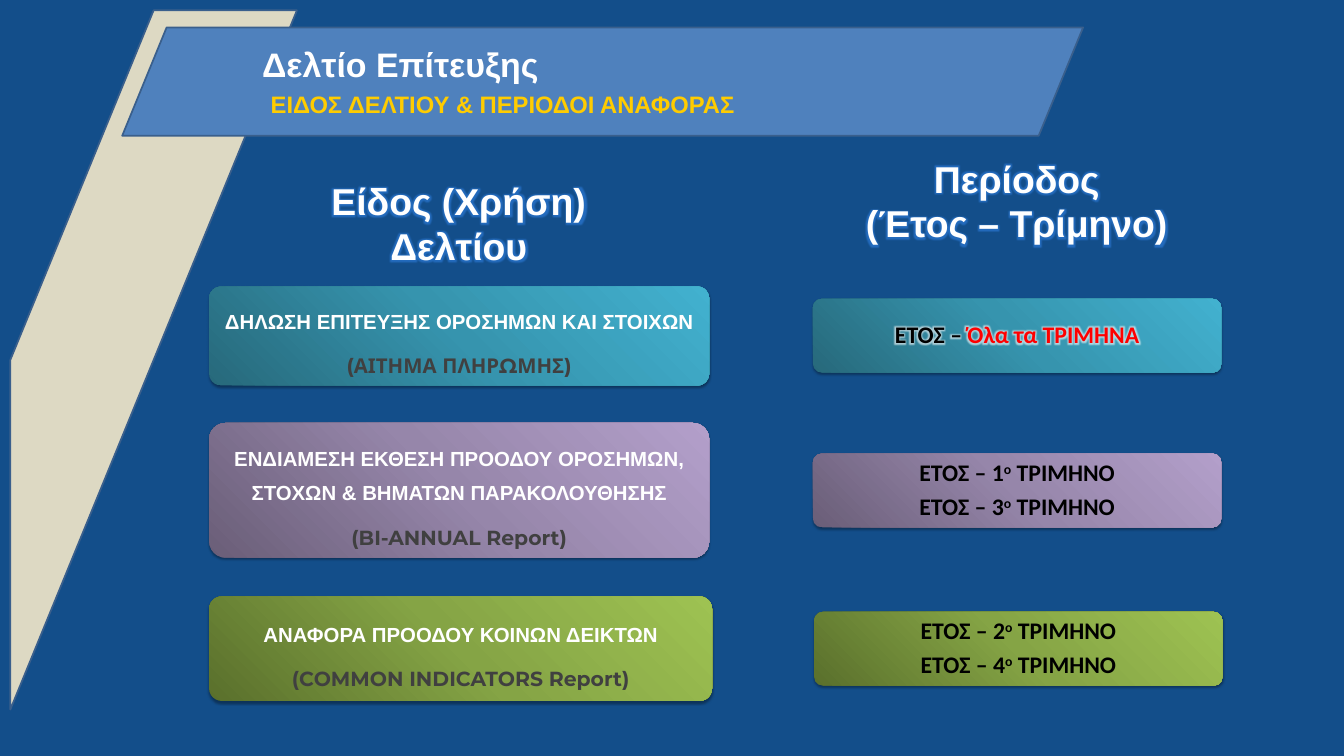
from copy import deepcopy

from lxml import etree
from pptx import Presentation
from pptx.dml.color import RGBColor
from pptx.enum.shapes import MSO_SHAPE
from pptx.enum.text import MSO_ANCHOR, PP_ALIGN
from pptx.oxml.ns import qn
from pptx.util import Cm, Pt

CENTER, LEFT = PP_ALIGN.CENTER, PP_ALIGN.LEFT
MIDDLE = MSO_ANCHOR.MIDDLE
ROUNDED = MSO_SHAPE.ROUNDED_RECTANGLE

COLORS = {
    "background": "134E8A", "stripe": "DDD9C3", "banner": "4F81BD", "outline": "3A5F8C",
    "white": "FFFFFF", "gold": "FFCC00", "grey": "404040", "black": "000000", "red": "FF0000",
    "glow": "2F7FE0",
}
GRADIENTS = {
    "teal": ("27697B", "3694AE", "42B1CF"),
    "purple": ("6A5E78", "9686AA", "B39FCA"),
    "green": ("5A702C", "85A445", "9EC252"),
}


def write(frame, paragraphs, size=24, font="Arial", color="white", align=CENTER, line=None,
          before=0, after=0, glow=None):
    """Fill a frame; each paragraph is a list of (text, format overrides) runs."""
    frame.word_wrap = True
    for i, runs in enumerate(paragraphs):
        paragraph = frame.paragraphs[0] if i == 0 else frame.add_paragraph()
        paragraph.alignment = align
        paragraph.line_spacing = line
        paragraph.space_before = Pt(before if i else 0)
        paragraph.space_after = Pt(after)
        for text, own in runs:
            run = paragraph.add_run()
            run.text = text
            run.font.size = Pt(size)
            run.font.bold = True
            run.font.color.rgb = RGBColor.from_string(COLORS[own.get("color", color)])
            properties = run.font._element
            if glow:
                effects = etree.Element(qn("a:effectLst"))
                halo = etree.SubElement(effects, qn("a:glow"), rad=str(Pt(8)))
                tint = etree.SubElement(halo, qn("a:srgbClr"), val=COLORS[glow])
                etree.SubElement(tint, qn("a:alpha"), val="60000")
                properties.find(qn("a:solidFill")).addnext(effects)
            run.font.name = own.get("font", font)
            if own.get("superscript"):
                properties.set("baseline", "30000")


def add_card(left, top, width, height, gradient, inset):
    """Add a rounded card with a diagonal gradient and soft shadow; return its text frame."""
    card = slide.shapes.add_shape(ROUNDED, Cm(left), Cm(top), Cm(width), Cm(height))
    card.adjustments[0] = 0.12
    card.line.fill.background()
    card.fill.gradient()
    card.fill.gradient_angle = 45
    properties = card._element.spPr
    stops = properties.find(qn("a:gradFill")).find(qn("a:gsLst"))
    stops.insert(1, deepcopy(stops[0]))
    for stop, position, color in zip(card.fill.gradient_stops, (0, 0.5, 1), GRADIENTS[gradient]):
        stop.position = position
        stop.color.rgb = RGBColor.from_string(color)
    card.shadow.inherit = False
    shadow = etree.SubElement(properties.find(qn("a:effectLst")), qn("a:outerShdw"),
                              blurRad=str(Pt(3.1)), dist=str(Pt(1.8)), dir="5400000",
                              rotWithShape="0")
    shade = etree.SubElement(shadow, qn("a:srgbClr"), val=COLORS["black"])
    etree.SubElement(shade, qn("a:alpha"), val="35000")
    frame = card.text_frame
    frame.vertical_anchor = MIDDLE
    frame.margin_left = frame.margin_right = frame.margin_top = frame.margin_bottom = Cm(inset)
    return frame


prs = Presentation()
prs.slide_width, prs.slide_height = Cm(55.85), Cm(31.42)
slide = prs.slides.add_slide(prs.slide_layouts[6])
slide.background.fill.solid()
slide.background.fill.fore_color.rgb = RGBColor.from_string(COLORS["background"])

# Diagonal stripe and title banner
for preset, box, color, slant in (
    (MSO_SHAPE.DIAGONAL_STRIPE, (0.43, 0.43, 11.91, 29.06), "stripe", 0.5),
    (MSO_SHAPE.PARALLELOGRAM, (5.08, 1.14, 39.93, 4.5), "banner", 0.41),
):
    decoration = slide.shapes.add_shape(preset, *map(Cm, box))
    decoration.adjustments[0] = slant
    decoration.fill.solid()
    decoration.fill.fore_color.rgb = RGBColor.from_string(COLORS[color])
    decoration.line.color.rgb = RGBColor.from_string(COLORS["outline"])
    decoration.line.width = Pt(2)
    decoration.shadow.inherit = False

# Title, subtitle and column headings
for box, lines, style in (
    ((10.64, 1.7, 29.62, 1.96), ["Δελτίο Επίτευξης"], {"size": 40, "align": LEFT}),
    ((11, 3.61, 32.33, 1.45), ["ΕΙΔΟΣ ΔΕΛΤΙΟΥ & ΠΕΡΙΟΔΟΙ ΑΝΑΦΟΡΑΣ"],
     {"size": 28, "color": "gold", "align": LEFT}),
    ((11.07, 7.29, 16, 4.01), ["Είδος (Χρήση) Δελτίου"], {"size": 44, "glow": "glow"}),
    ((34.26, 6.35, 16, 4.01), ["Περίοδος", "(Έτος – Τρίμηνο)"], {"size": 44, "glow": "glow"}),
):
    heading = slide.shapes.add_textbox(*map(Cm, box))
    write(heading.text_frame, [[(text, {})] for text in lines], **style)

# Report types
for top, width, height, gradient, report, use in (
    (11.91, 20.78, 4.11, "teal", "ΔΗΛΩΣΗ ΕΠΙΤΕΥΞΗΣ ΟΡΟΣΗΜΩΝ ΚΑΙ ΣΤΟΙΧΩΝ", "(ΑΙΤΗΜΑ ΠΛΗΡΩΜΗΣ)"),
    (17.58, 20.78, 5.6, "purple",
     "ΕΝΔΙΑΜΕΣΗ ΕΚΘΕΣΗ ΠΡΟΟΔΟΥ ΟΡΟΣΗΜΩΝ, ΣΤΟΧΩΝ & ΒΗΜΑΤΩΝ ΠΑΡΑΚΟΛΟΥΘΗΣΗΣ",
     "(BI-ANNUAL Report)"),
    (24.79, 20.9, 4.34, "green", "ΑΝΑΦΟΡΑ ΠΡΟΟΔΟΥ ΚΟΙΝΩΝ ΔΕΙΚΤΩΝ", "(COMMON INDICATORS Report)"),
):
    report_frame = add_card(8.69, top, width, height, gradient, 0.33)
    report_frame.margin_top = Cm(0.54)
    write(report_frame, [[(report, {})], [(use, {"font": "Montserrat", "color": "grey"})]],
          line=1.4, before=6, after=6)

# Reporting periods
all_quarters = [[("ΕΤΟΣ – ", {}), ("Όλα τα ΤΡΙΜΗΝΑ", {"color": "red"})]]
first_and_third, second_and_fourth = (
    [[(f"ΕΤΟΣ – {quarter}", {}), ("ο", {"superscript": True}), (" ΤΡΙΜΗΝΟ", {})]
     for quarter in quarters]
    for quarters in ((1, 3), (2, 4))
)
for left, top, gradient, periods, glow in (
    (33.78, 12.42, "teal", all_quarters, "white"),
    (33.78, 18.85, "purple", first_and_third, None),
    (33.83, 25.43, "green", second_and_fourth, None),
):
    write(add_card(left, top, 16.97, 3.07, gradient, 0.38), periods, size=28, font="Calibri",
          color="black", line=0.9, after=9.8, glow=glow)

prs.save("out.pptx")
